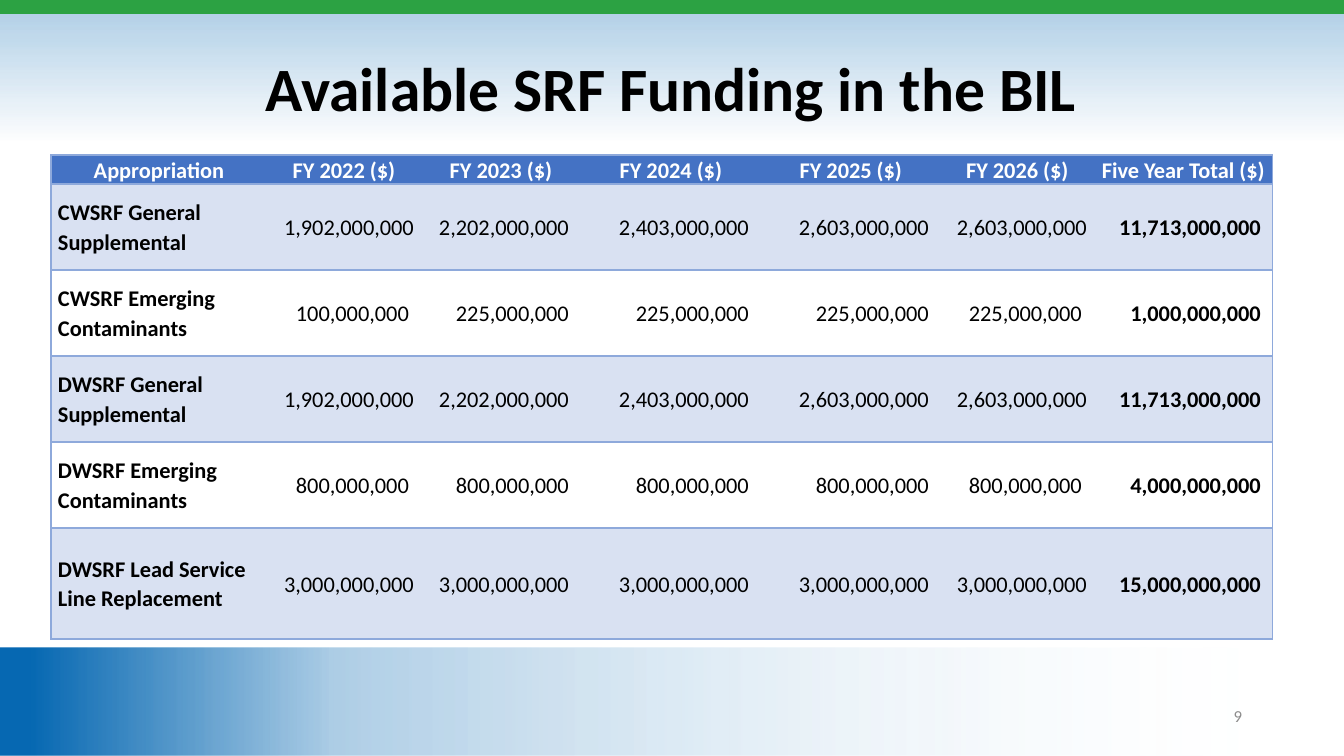
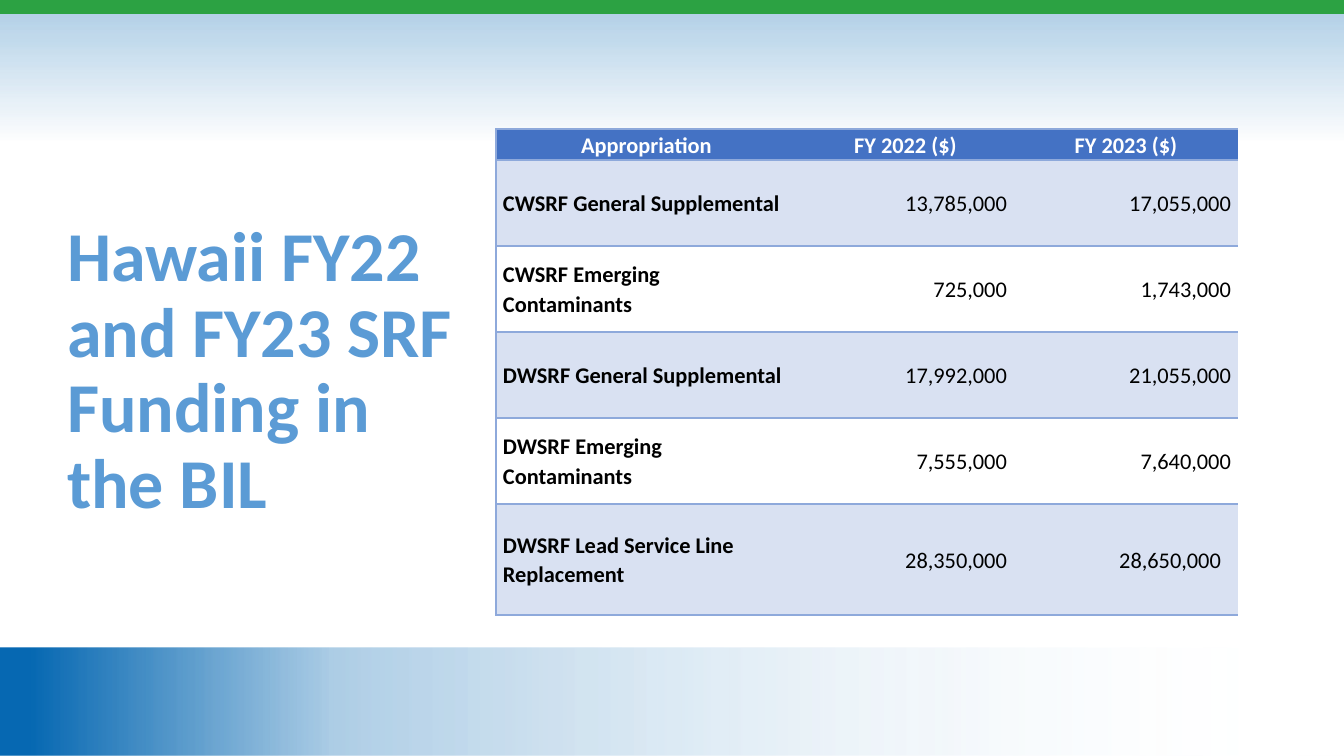
from dataclasses import dataclass

from pptx import Presentation
from pptx.dml.color import RGBColor as Rgb
from pptx.enum.shapes import MSO_SHAPE as Shape
from pptx.enum.text import MSO_ANCHOR as Anchor, MSO_AUTO_SIZE as Fit, PP_ALIGN as Align
from pptx.oxml import parse_xml
from pptx.oxml.ns import nsdecls, qn
from pptx.util import Pt

WIDE, HIGH = 1344, 756
SCALE = 12192000 / WIDE
PLAIN = "{2D5ABB26-0587-4C30-8999-92F81FD0307C}"


@dataclass(frozen=True)
class Theme:
    font: str = "Calibri"
    black: str = "000000"
    white: str = "FFFFFF"
    green: str = "2CA243"
    deep: str = "0668B2"
    sky: str = "5B9BD5"
    head: str = "4472C4"
    tint: str = "D9E1F2"
    rule: str = "8EA9DB"
    gray: str = "8C8C8C"
    title: int = 44
    large: int = 50
    body: int = 16
    small: int = 12


THEME = Theme()

FUNDS = [
    "CWSRF General Supplemental",
    "CWSRF Emerging Contaminants",
    "DWSRF General Supplemental",
    "DWSRF Emerging Contaminants",
    "DWSRF Lead Service Line Replacement",
]
BASE = ["1,902,000,000", "2,202,000,000", "2,403,000,000",
        "2,603,000,000", "2,603,000,000", "11,713,000,000"]
NATION = [
    BASE,
    ["100,000,000"] + ["225,000,000"] * 4 + ["1,000,000,000"],
    BASE,
    ["800,000,000"] * 5 + ["4,000,000,000"],
    ["3,000,000,000"] * 5 + ["15,000,000,000"],
]
HAWAII = [
    ["13,785,000", "17,055,000"],
    ["725,000", "1,743,000"],
    ["17,992,000", "21,055,000"],
    ["7,555,000", "7,640,000"],
    ["28,350,000", "28,650,000"],
]


def px(size):
    return round(size * SCALE)


def box(*sizes):
    return [px(size) for size in sizes]


def style(para, size, color, bold=False, align=Align.LEFT):
    para.alignment = align
    font = para.font
    font.name, font.size, font.bold = THEME.font, Pt(size), bold
    font.color.rgb = Rgb.from_string(color)


def band(slide, area, color):
    shape = slide.shapes.add_shape(Shape.RECTANGLE, *box(*area))
    shape.shadow.inherit = False
    shape.line.fill.background()
    shape.fill.solid()
    shape.fill.fore_color.rgb = Rgb.from_string(color)
    return shape


def fade(shape, stops, angle):
    marks = "".join(
        f'<a:gs pos="{pos * 1000}"><a:srgbClr val="{color}">'
        f'<a:alpha val="{alpha * 1000}"/></a:srgbClr></a:gs>'
        for pos, color, alpha in stops)
    grad = parse_xml(
        f'<a:gradFill {nsdecls("a")} rotWithShape="1"><a:gsLst>{marks}</a:gsLst>'
        f'<a:lin ang="{angle * 60000}" scaled="0"/></a:gradFill>')
    props = shape.element.spPr
    props.replace(props.find(qn("a:solidFill")), grad)


def dress(slide):
    top = band(slide, (0, 14, WIDE, 186), THEME.deep)
    fade(top, [(32, THEME.deep, 0), (100, THEME.deep, 30)], 270)
    strip = band(slide, (0, 0, WIDE, 14), THEME.green)
    foot = band(slide, (0, 648, WIDE, HIGH - 648), THEME.deep)
    fade(foot, [(3, THEME.white, 0), (75, THEME.deep, 32), (98, THEME.deep, 100)], 180)
    tree = slide.slide_layout.shapes.element
    for spot, shape in enumerate((top, strip, foot)):
        shape.element.nvSpPr.cNvPr.set("id", str(100 + spot))
        tree.insert(2 + spot, shape.element)


def head(slide, text, area, size, color, align):
    title = slide.shapes.title
    title.left, title.top, title.width, title.height = box(*area)
    frame = title.text_frame
    frame.text = text
    frame.word_wrap, frame.auto_size = True, Fit.NONE
    frame.vertical_anchor = Anchor.MIDDLE
    para = frame.paragraphs[0]
    para.line_spacing = 0.9
    style(para, size, color, True, align)


def number(slide, text):
    frame = slide.shapes.add_textbox(*box(950, 701, 302, 40)).text_frame
    frame.word_wrap = True
    para = frame.paragraphs[0]
    para.text = text
    para.space_after = Pt(6)
    style(para, THEME.small, THEME.gray, align=Align.RIGHT)


def border(cell, sides):
    props = cell._tc.get_or_add_tcPr()
    for side in sides:
        props.append(parse_xml(
            f'<a:ln{side} {nsdecls("a")} w="12700"><a:solidFill>'
            f'<a:srgbClr val="{THEME.rule}"/></a:solidFill></a:ln{side}>'))


def write(cell, text, fill, color, bold, align, anchor, pad):
    cell.margin_left, cell.margin_right = px(7), px(7 + pad)
    cell.margin_top = cell.margin_bottom = 0
    cell.vertical_anchor = anchor
    if fill:
        cell.fill.solid()
        cell.fill.fore_color.rgb = Rgb.from_string(fill)
    else:
        cell.fill.background()
    para = cell.text_frame.paragraphs[0]
    para.text = text
    para.line_spacing, para.space_after = 1.07, Pt(8)
    style(para, THEME.body, color, bold, align)


def grid(slide, spot, cols, rows, data, pads, total=False):
    shape = slide.shapes.add_table(
        len(rows), len(cols), *box(*spot, sum(cols), sum(rows)))
    table = shape.table
    table.horz_banding = False
    table._tbl.tblPr.find(qn("a:tableStyleId")).text = PLAIN
    for col, size in zip(table.columns, cols):
        col.width = px(size)
    for row, size in zip(table.rows, rows):
        row.height = px(size)
    last = len(cols) - 1
    for y, line in enumerate(data):
        for x, text in enumerate(line):
            cell = table.cell(y, x)
            end = total and x == last
            border(cell, "L" * (x == 0) + "R" * end + "TB")
            if y == 0:
                look = THEME.head, THEME.white, True, Align.CENTER, Anchor.BOTTOM
            else:
                look = (THEME.tint if y % 2 else None, THEME.black, x == 0 or end,
                        Align.RIGHT if x else Align.LEFT, Anchor.MIDDLE)
            write(cell, text, *look, pads.get((y, x), 0))


def rows(names, values):
    return [names] + [[fund, *line] for fund, line in zip(FUNDS, values)]


def main():
    deck = Presentation()
    deck.slide_width, deck.slide_height = box(WIDE, HIGH)
    layout = deck.slide_layouts[5]
    years = [f"FY {year} ($)" for year in range(2022, 2027)]
    tall = [86] * 4 + [111]

    slide = deck.slides.add_slide(layout)
    dress(slide)
    head(slide, "Available SRF Funding in the BIL", (126, 19, 1091, 146),
         THEME.title, THEME.black, Align.CENTER)
    number(slide, "9")
    cols = [216, 154, 160, 180, 180, 153, 179]
    data = rows(["Appropriation", *years, "Five Year Total ($)"], NATION)
    pads = {(y, x): 5 for y in range(1, 6) for x in range(1, 7)
            if cols[x] >= 160 or len(data[y][x]) < 12}
    grid(slide, (51, 155), cols, [29] + tall, data, pads, True)

    slide = deck.slides.add_slide(layout)
    head(slide, "Hawaii FY22 and FY23 SRF Funding in the BIL", (57, 69, 419, 607),
         THEME.large, THEME.sky, Align.LEFT)
    data = rows(["Appropriation", *years[:2]], HAWAII)
    grid(slide, (496, 129), [301, 217, 224], [31] + tall, data, {(5, 2): 10})

    deck.save("out.pptx")


if __name__ == "__main__":
    main()
